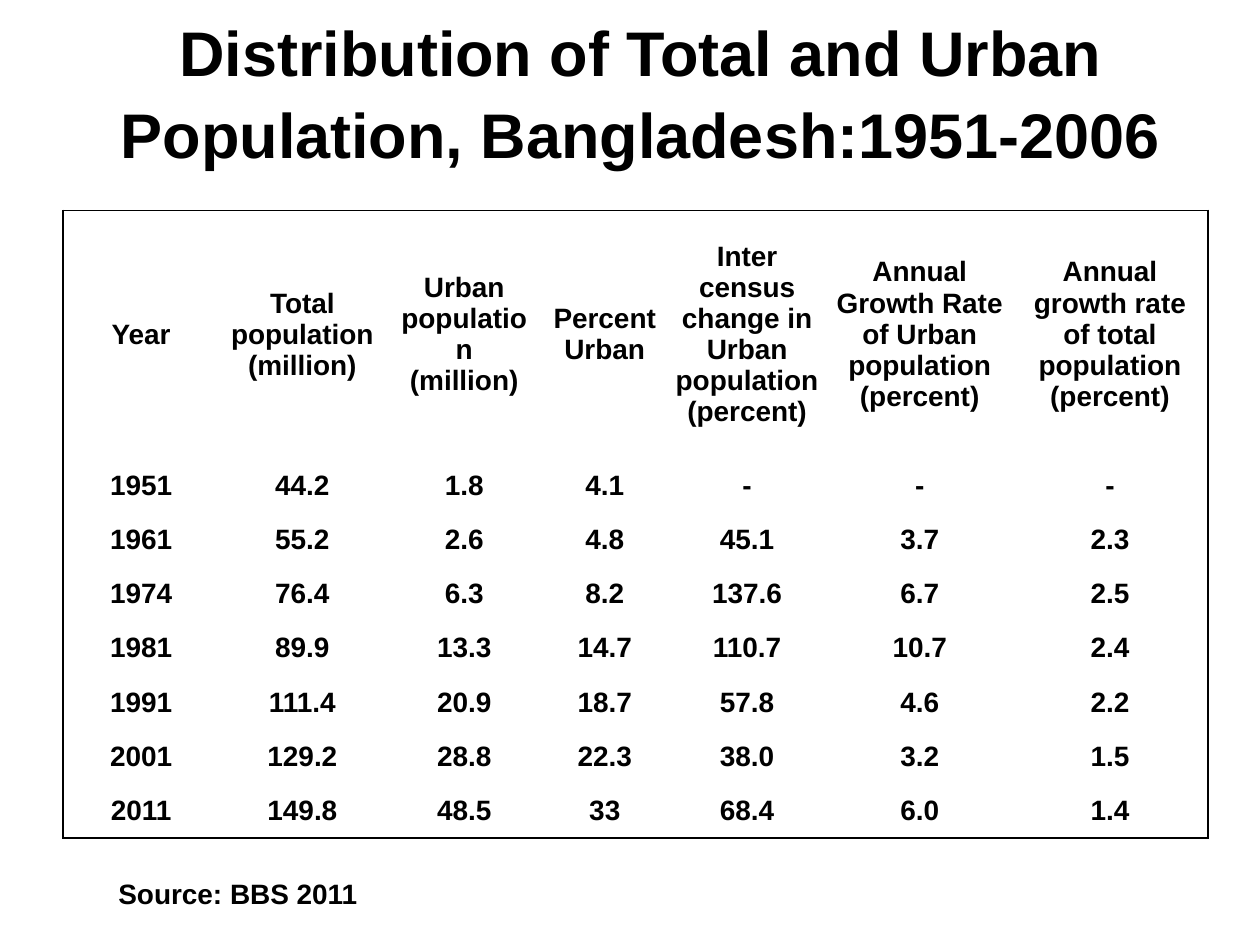
from lxml.etree import SubElement
from pptx import Presentation
from pptx.dml.color import RGBColor
from pptx.enum.text import MSO_ANCHOR as Anchor, PP_ALIGN as Align
from pptx.oxml.ns import qn
from pptx.util import Inches, Pt

TITLE = "Distribution of Total and Urban Population, Bangladesh:1951-2006"
HEADERS = [
    "Year",
    "Total population\n(million)",
    "Urban population\n(million)",
    "Percent\nUrban",
    "Inter census change in Urban population (percent)",
    "Annual Growth Rate of Urban population (percent)",
    "Annual growth rate of total population (percent)",
]
CENSUS = [
    ("1951", "44.2", "1.8", "4.1", "-", "-", "-"),
    ("1961", "55.2", "2.6", "4.8", "45.1", "3.7", "2.3"),
    ("1974", "76.4", "6.3", "8.2", "137.6", "6.7", "2.5"),
    ("1981", "89.9", "13.3", "14.7", "110.7", "10.7", "2.4"),
    ("1991", "111.4", "20.9", "18.7", "57.8", "4.6", "2.2"),
    ("2001", "129.2", "28.8", "22.3", "38.0", "3.2", "1.5"),
    ("2011", "149.8", "48.5", "33", "68.4", "6.0", "1.4"),
]
SOURCE = "Source: BBS 2011"

COLORS = {"ink": "000000", "paper": "FFFFFF"}
COLUMN_WIDTHS = [1.24, 1.32, 1.25, 0.98, 1.28, 1.46, 1.56]
ROW_HEIGHTS = [1.97] + [0.43] * len(CENSUS) + [0.62]
PLAIN_STYLE = "{2D5ABB26-0587-4C30-8999-92F81FD0307C}"  # no style, no grid

HEADER_FORMAT = {"alignment": Align.CENTER}
VALUE_FORMAT = {"alignment": Align.CENTER, "space_before": Pt(2.5), "space_after": Pt(1)}
SOURCE_FORMAT = {"alignment": Align.LEFT, "space_after": Pt(1)}
TITLE_FORMAT = {"alignment": Align.CENTER, "line_spacing": 1.08}
CELL_MARGINS = {"margin_left": 0.07, "margin_right": 0.07, "margin_top": 0, "margin_bottom": 0}
SOURCE_MARGINS = CELL_MARGINS | {"margin_left": 0.44, "margin_bottom": 0.04}


def write(frame, text, size, paragraph_format):
    frame.text = text
    for para in frame.paragraphs:
        for name, value in paragraph_format.items():
            setattr(para, name, value)
        for span in para.runs:
            for name, value in {"name": "Arial", "size": Pt(size), "bold": True}.items():
                setattr(span.font, name, value)
            span.font.color.rgb = RGBColor.from_string(COLORS["ink"])


def fill_cell(cell, text, paragraph_format, margins, anchor=Anchor.MIDDLE):
    write(cell.text_frame, text, 16, paragraph_format)
    cell.vertical_anchor = anchor
    for name, inches in margins.items():
        setattr(cell, name, Inches(inches))


def draw_borders(cell, sides):
    """Rule the given sides, a string made of the letters L, R, T and B in that order."""
    properties = cell._tc.get_or_add_tcPr()
    for side in sides:
        line = SubElement(properties, qn(f"a:ln{side}"), w=str(Pt(1)))
        SubElement(SubElement(line, qn("a:solidFill")), qn("a:srgbClr"), val=COLORS["ink"])


def add_title(page):
    box = page.shapes.add_textbox(Inches(0.5), Inches(0.25), Inches(9.17), Inches(0.92))
    box.text_frame.word_wrap = True
    box.text_frame.vertical_anchor = Anchor.MIDDLE
    write(box.text_frame, TITLE, 36, TITLE_FORMAT)


def add_census_table(page):
    shape = page.shapes.add_table(
        len(ROW_HEIGHTS), len(COLUMN_WIDTHS), Inches(0.5), Inches(1.67),
        Inches(sum(COLUMN_WIDTHS)), Inches(sum(ROW_HEIGHTS)))
    table = shape.table
    table.first_row = table.horz_banding = False
    table._tbl.tblPr.find(qn("a:tableStyleId")).text = PLAIN_STYLE
    for column, width in zip(table.columns, COLUMN_WIDTHS):
        column.width = Inches(width)
    for row, height in zip(table.rows, ROW_HEIGHTS):
        row.height = Inches(height)

    last_row, last_column = len(CENSUS), len(HEADERS) - 1
    for r, values in enumerate([HEADERS, *CENSUS]):
        for c, text in enumerate(values):
            cell = table.cell(r, c)
            fill_cell(cell, text, VALUE_FORMAT if r else HEADER_FORMAT, CELL_MARGINS)
            edges = {"L": c == 0, "R": c == last_column, "T": r == 0, "B": r == last_row}
            draw_borders(cell, [side for side, on_edge in edges.items() if on_edge])

    source_row = last_row + 1
    for c in range(len(HEADERS)):
        draw_borders(table.cell(source_row, c), "T")
    source_cell = table.cell(source_row, 0)
    source_cell.merge(table.cell(source_row, last_column))
    fill_cell(source_cell, SOURCE, SOURCE_FORMAT, SOURCE_MARGINS, Anchor.BOTTOM)


def main():
    deck = Presentation()
    deck.slide_width, deck.slide_height = Inches(10), Inches(7.5)
    page = deck.slides.add_slide(deck.slide_layouts[6])
    page.background.fill.solid()
    page.background.fill.fore_color.rgb = RGBColor.from_string(COLORS["paper"])
    add_title(page)
    add_census_table(page)
    deck.save("out.pptx")


if __name__ == "__main__":
    main()
